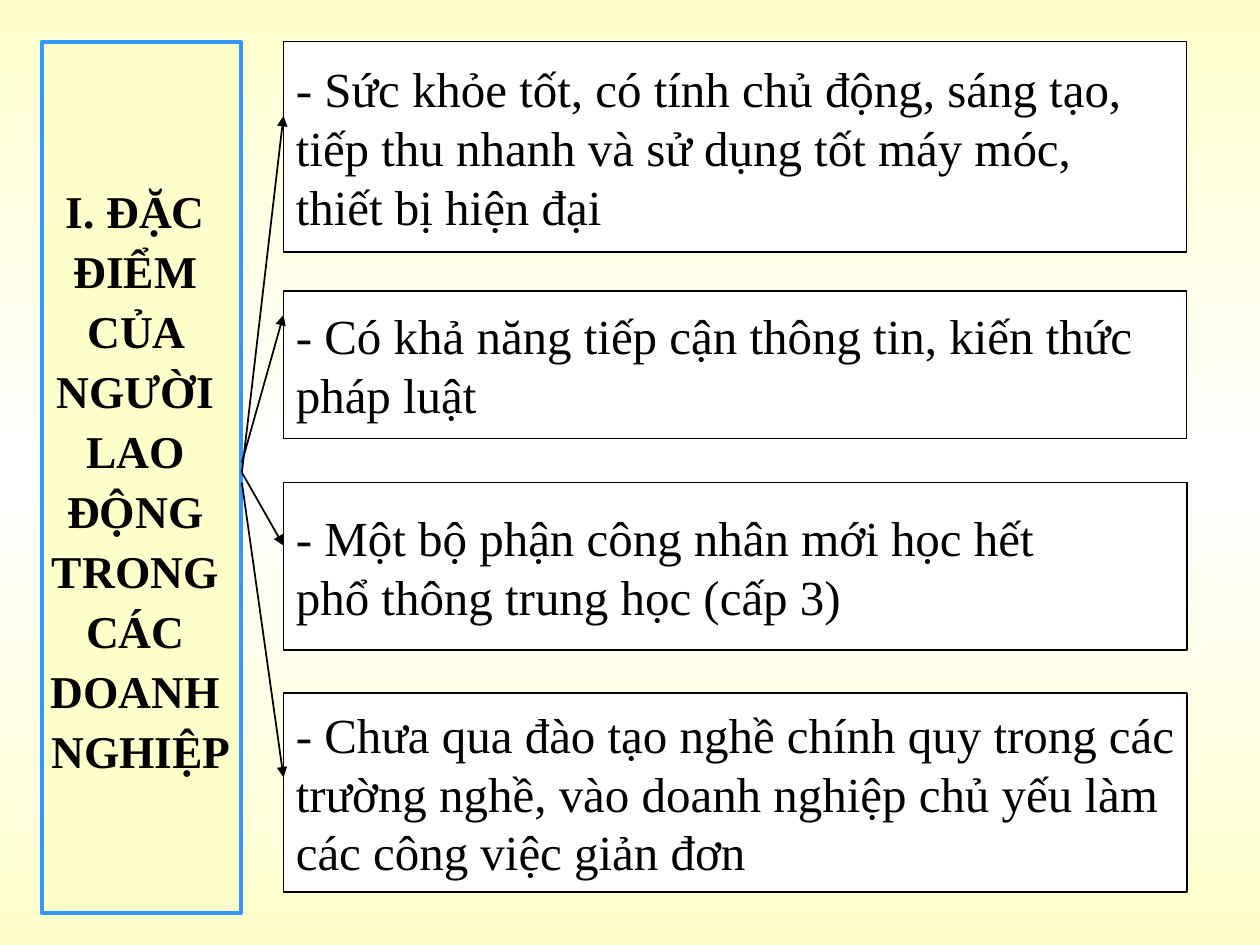
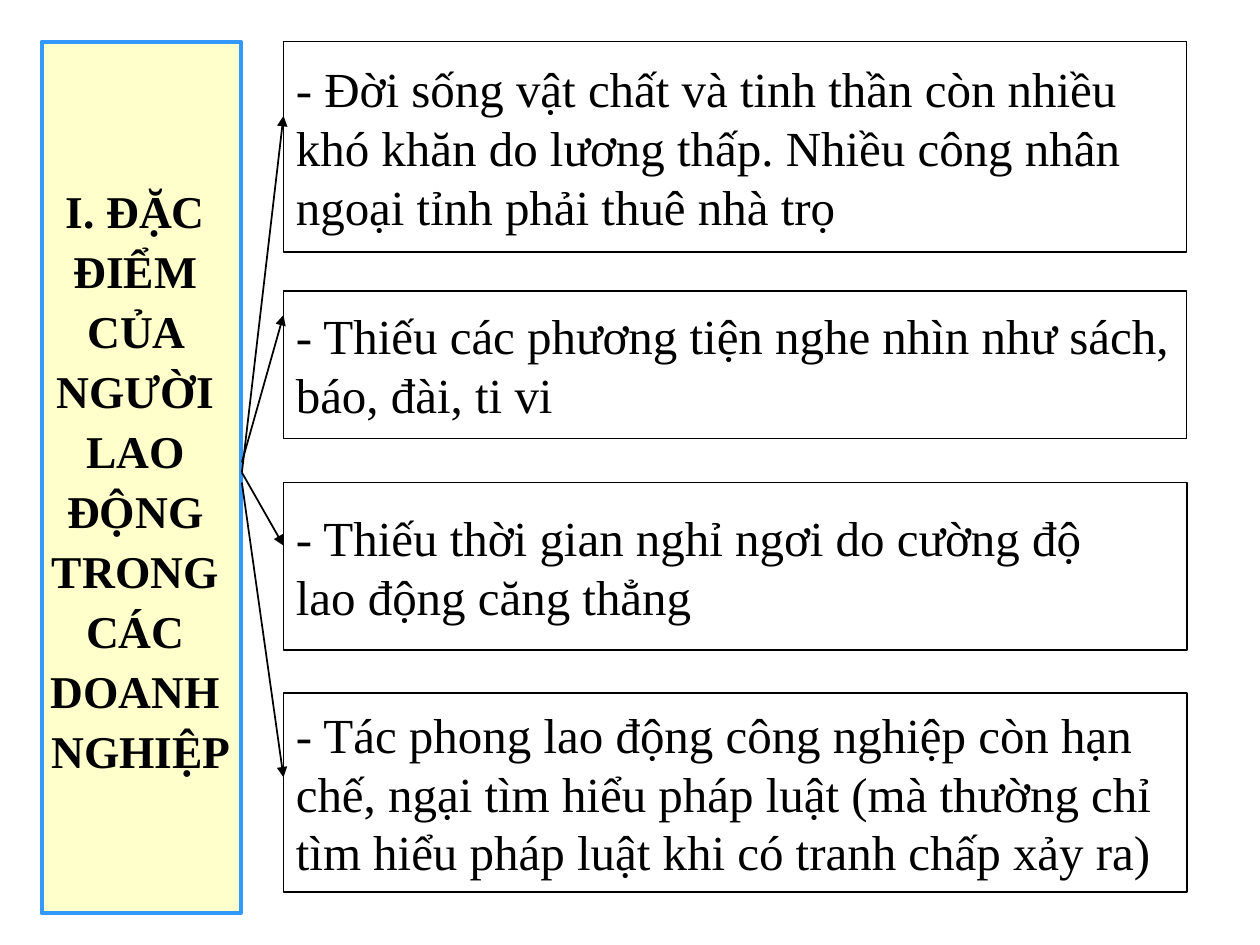
from copy import deepcopy

from lxml import etree
from pptx import Presentation
from pptx.dml.color import RGBColor
from pptx.enum.shapes import MSO_CONNECTOR, MSO_SHAPE
from pptx.enum.text import MSO_ANCHOR, MSO_AUTO_SIZE, PP_ALIGN
from pptx.oxml.ns import qn
from pptx.util import Inches, Pt

RECTANGLE = MSO_SHAPE.RECTANGLE
STRAIGHT = MSO_CONNECTOR.STRAIGHT
MIDDLE = MSO_ANCHOR.MIDDLE
NO_AUTOFIT = MSO_AUTO_SIZE.NONE
CENTER, LEFT, JUSTIFY = PP_ALIGN.CENTER, PP_ALIGN.LEFT, PP_ALIGN.JUSTIFY

BLACK = RGBColor(0x00, 0x00, 0x00)
WHITE = RGBColor(0xFF, 0xFF, 0xFF)
CREAM = RGBColor(0xFF, 0xFF, 0xCC)
BLUE = RGBColor(0x33, 0x99, 0xFF)
FONT = "Times New Roman"

TITLE_LINES = ["I. ĐẶC ", "ĐIỂM ", "CỦA ", "NGƯỜI ", "LAO ", "ĐỘNG ",
               "TRONG ", "CÁC ", "DOANH ", "NGHIỆP"]
TITLE_RIGHT = 1.92
POINT_LEFT, POINT_WIDTH = 2.25, 7.17

# top, height, outline width, alignment, arrow start y, arrow end y
POINT_ROWS = [
    (0.33, 1.67, 0.75, JUSTIFY, 3.75, 0.92),
    (2.31, 1.17, 0.75, JUSTIFY, 3.67, 2.5),
    (3.83, 1.33, 1, LEFT, 3.75, 4.33),
    (5.5, 1.58, 1, LEFT, 3.83, 6.17),
]

SLIDE_POINTS = [
    [
        ["- Sức khỏe tốt, có tính chủ động, sáng tạo, ",
         "tiếp thu nhanh và sử dụng tốt máy móc, ",
         "thiết bị hiện đại"],
        ["- Có khả năng tiếp cận thông tin, kiến thức ",
         "pháp luật"],
        ["- Một bộ phận công nhân mới học hết",
         "phổ thông trung học (cấp 3)"],
        ["- Chưa qua đào tạo nghề chính quy trong các",
         "trường nghề, vào doanh nghiệp chủ yếu làm",
         "các công việc giản đơn"],
    ],
    [
        ["- Đời sống vật chất và tinh thần còn nhiều ",
         "khó khăn do lương thấp. Nhiều công nhân ",
         "ngoại tỉnh phải thuê nhà trọ"],
        ["- Thiếu các phương tiện nghe nhìn như sách, ",
         "báo, đài, ti vi"],
        ["- Thiếu thời gian nghỉ ngơi do cường độ",
         "lao động căng thẳng"],
        ["- Tác phong lao động công nghiệp còn hạn",
         "chế, ngại tìm hiểu pháp luật (mà thường chỉ",
         "tìm hiểu pháp luật khi có tranh chấp xảy ra)"],
    ],
]


def fill_box(box, lines, fill, outline, outline_width, size, bold, align, spacing):
    """Style a box and set one paragraph per line of text."""
    box.fill.solid()
    box.fill.fore_color.rgb = fill
    box.line.color.rgb = outline
    box.line.width = Pt(outline_width)
    frame = box.text_frame
    frame.text = "\n".join(lines)
    frame.word_wrap = False
    frame.auto_size = NO_AUTOFIT
    frame.vertical_anchor = MIDDLE
    for paragraph in frame.paragraphs:
        paragraph.alignment = align
        paragraph.line_spacing = spacing
        font = paragraph.runs[0].font
        font.name = FONT
        font.size = Pt(size)
        font.bold = bold
        font.color.rgb = BLACK


def add_arrow(slide, start_y, end_y):
    arrow = slide.shapes.add_connector(
        STRAIGHT, Inches(TITLE_RIGHT), Inches(start_y),
        Inches(POINT_LEFT), Inches(end_y))
    arrow.line.color.rgb = BLACK
    arrow.line.width = Pt(1)
    properties = arrow.element.spPr
    etree.SubElement(properties.find(qn("a:ln")), qn("a:tailEnd"), type="triangle")
    etree.SubElement(properties, qn("a:effectLst"))


prs = Presentation()
prs.slide_width, prs.slide_height = Inches(10), Inches(7.5)
title_only = prs.slide_layouts[5]

for points in SLIDE_POINTS:
    slide = prs.slides.add_slide(title_only)

    title = slide.shapes.title
    title.left, title.top = Inches(0.33), Inches(0.33)
    title.width, title.height = Inches(1.58), Inches(6.92)
    fill_box(title, TITLE_LINES, CREAM, BLUE, 2.25, 26, True, CENTER, 1.1)
    # A title placeholder wraps at its margins, and the longest word needs the full width.
    title.text_frame.margin_left = title.text_frame.margin_right = 0

    for lines, row in zip(points, POINT_ROWS):
        top, height, outline_width, align, start_y, end_y = row
        point = slide.shapes.add_shape(
            RECTANGLE, Inches(POINT_LEFT), Inches(top),
            Inches(POINT_WIDTH), Inches(height))
        point.shadow.inherit = False
        fill_box(point, lines, WHITE, BLACK, outline_width, 28, False, align, 1.0)
        add_arrow(slide, start_y, end_y)

# The first slide fades from cream to white and back; the second is plain white.
first, second = prs.slides
fade = first.background.fill
fade.gradient()
fade.gradient_angle = 270
stop_list = first.element.find(".//" + qn("a:gsLst"))
stop_list.insert(1, deepcopy(stop_list[0]))
for stop, position, color in zip(fade.gradient_stops, (0, 0.5, 1), (CREAM, WHITE, CREAM)):
    stop.position = position
    stop.color.rgb = color

second.background.fill.solid()
second.background.fill.fore_color.rgb = WHITE

prs.save("out.pptx")
